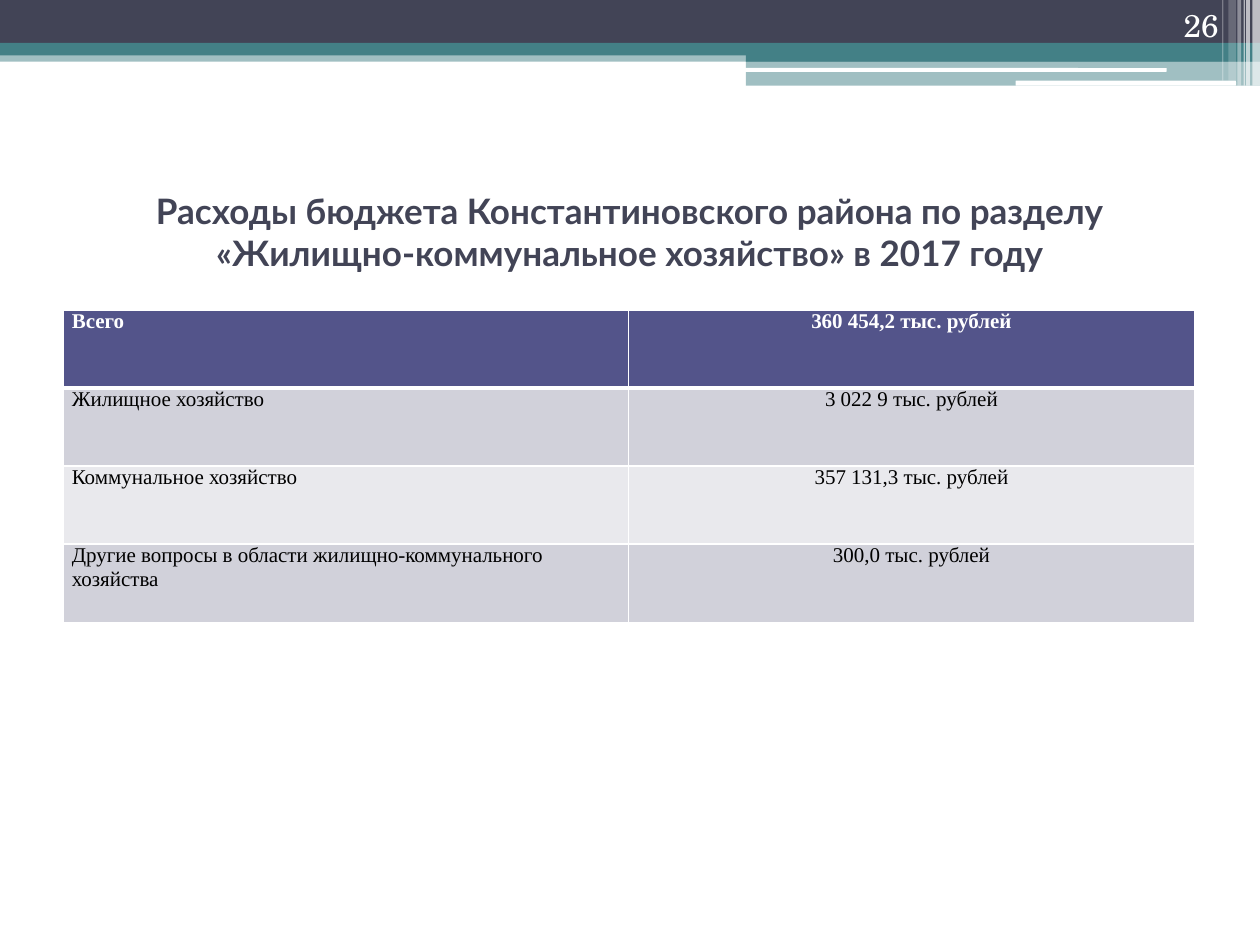
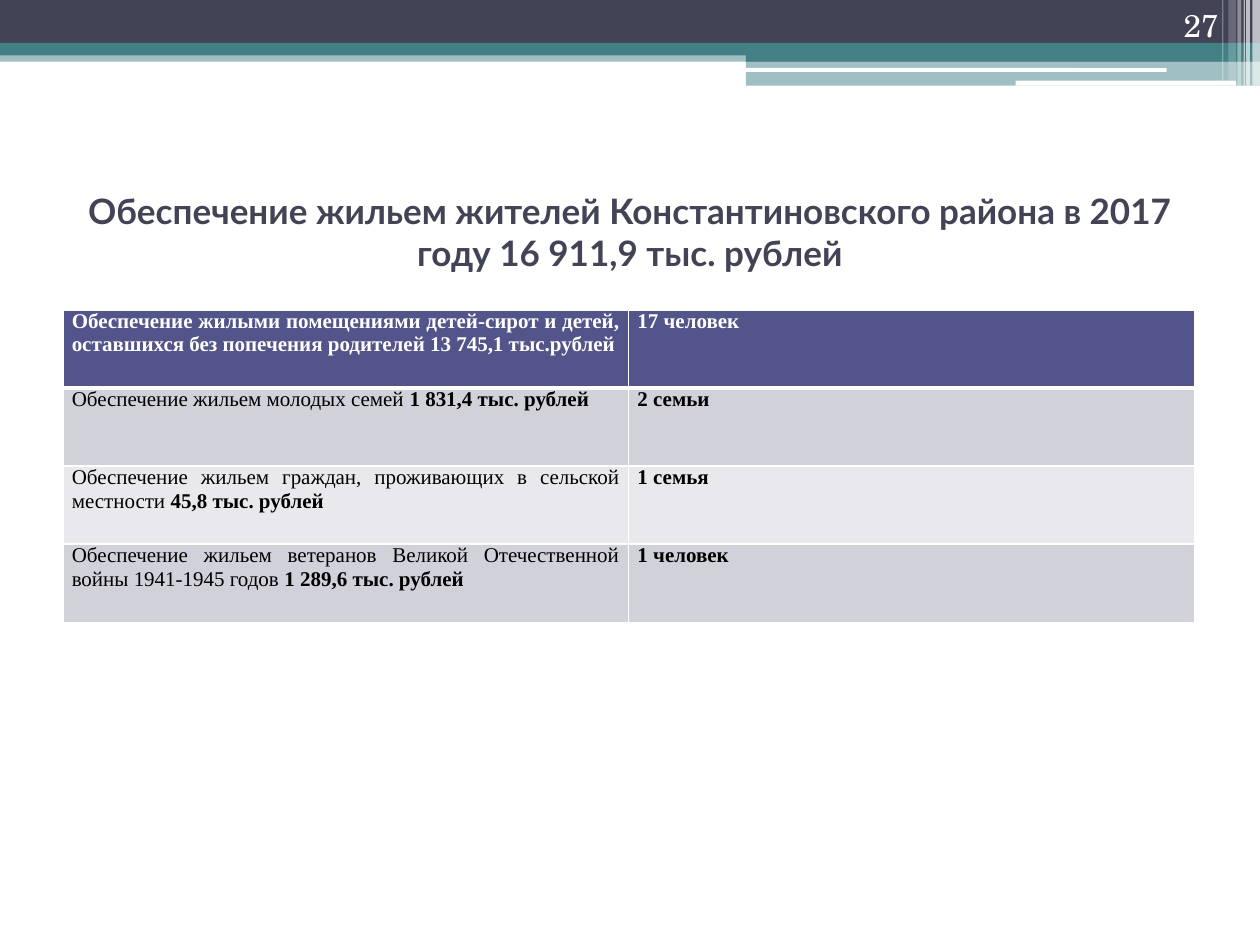
from dataclasses import dataclass

from lxml import etree
from pptx import Presentation
from pptx import util as u
from pptx.dml.color import RGBColor
from pptx.enum import shapes, text
from pptx.oxml import ns


@dataclass(frozen=True)
class Theme:
    dark: str = "424456"
    teal: str = "438086"
    white: str = "FFFFFF"
    black: str = "000000"
    header: str = "53548A"
    band_odd: str = "D1D1DA"
    band_even: str = "E9E9ED"
    title_font: str = "Lato"
    table_font: str = "Times New Roman"
    number_font: str = "TeX Gyre Schola"
    title_size: int = 20
    table_size: int = 12
    number_size: int = 18


theme = Theme()
al = text.PP_ALIGN
anchor = text.MSO_ANCHOR
rect = shapes.MSO_SHAPE.RECTANGLE
rounded = shapes.MSO_SHAPE.ROUNDED_RECTANGLE

title_format = {"name": theme.title_font, "size": u.Pt(theme.title_size), "bold": True}
table_format = {"name": theme.table_font, "size": u.Pt(theme.table_size)}
number_format = {"name": theme.number_font, "size": u.Pt(theme.number_size)}

bands = [
    (rect, 0, 0.4, 10, 0.09, theme.teal, 50),
    (rect, 0, 0, 10, 0.34, theme.dark, 100),
    (rect, 0, 0.34, 10, 0.1, theme.teal, 100),
    (rect, 5.92, 0.39, 4.08, 0.1, theme.teal, 100),
    (rect, 5.92, 0.48, 4.08, 0.2, theme.teal, 50),
    (rounded, 5.91, 0.54, 3.35, 0.03, theme.white, 100),
    (rounded, 8.06, 0.64, 1.75, 0.04, theme.white, 100),
]
stripes = [
    (9.94, 0.06, 0.68, 65),
    (9.89, 0.03, 0.68, 65),
    (9.87, 0.01, 0.68, 60),
    (9.82, 0.03, 0.68, 40),
    (9.75, 0.06, 0.64, 20),
    (9.7, 0.01, 0.64, 30),
]
bands += [(rect, x, 0, w, h, theme.white, alpha) for x, w, h, alpha in stripes]

pages = [
    {
        "number": "26",
        "title": "Расходы бюджета Константиновского района по разделу "
                 "«Жилищно-коммунальное хозяйство» в 2017 году",
        "aligns": (al.LEFT, al.CENTER),
        "rows": [
            ("|Всего", "|360 454,2 тыс. рублей"),
            ("Жилищное хозяйство", "3 022 9 тыс. рублей"),
            ("Коммунальное хозяйство", "357 131,3 тыс. рублей"),
            ("Другие вопросы в области жилищно-коммунального хозяйства", "300,0 тыс. рублей"),
        ],
    },
    {
        "number": "27",
        "title": "Обеспечение жильем жителей Константиновского района в 2017 году "
                 "16 911,9 тыс. рублей",
        "aligns": (al.JUSTIFY, al.JUSTIFY),
        "rows": [
            ("|Обеспечение жилыми помещениями детей-сирот и детей, оставшихся без "
             "попечения родителей 13 745,1 тыс.рублей", "|17 человек"),
            ("Обеспечение жильем молодых семей |1 831,4 тыс. рублей", "|2 семьи"),
            ("Обеспечение жильем граждан, проживающих в сельской местности "
             "|45,8 тыс. рублей", "|1 семья"),
            ("Обеспечение жильем ветеранов Великой Отечественной войны 1941-1945 годов "
             "|1 289,6 тыс. рублей", "|1 человек"),
        ],
    },
]


def add_run(p, words, color, formats):
    r = p.add_run()
    r.text = words
    r.font.color.rgb = RGBColor.from_string(color)
    for key, value in formats.items():
        setattr(r.font, key, value)


def add_text(s, box, words, color, formats, align, vertical):
    tf = s.shapes.add_textbox(*map(u.Inches, box)).text_frame
    tf.word_wrap = True
    tf.vertical_anchor = vertical
    p = tf.paragraphs[0]
    p.alignment = align
    add_run(p, words, color, formats)


prs = Presentation()
prs.slide_width, prs.slide_height = u.Inches(10), u.Inches(7.5)

for page in pages:
    s = prs.slides.add_slide(prs.slide_layouts[6])

    for kind, x, y, w, h, color, alpha in bands:
        sp = s.shapes.add_shape(kind, *map(u.Inches, (x, y, w, h)))
        sp.shadow.inherit = False
        sp.line.fill.background()
        sp.fill.solid()
        sp.fill.fore_color.rgb = RGBColor.from_string(color)
        if alpha < 100:
            clr = sp.fill._xPr.find(".//" + ns.qn("a:srgbClr"))
            etree.SubElement(clr, ns.qn("a:alpha"), val=str(alpha * 1000))

    add_text(s, (0.5, 1.25, 9, 1.17), page["title"], theme.dark, title_format,
             al.CENTER, anchor.MIDDLE)

    rows = page["rows"]
    table = s.shapes.add_table(len(rows), 2, *map(u.Inches, (0.5, 2.46, 8.98, 2.48))).table
    table.first_row = table.horz_banding = False
    for i, row in enumerate(rows):
        fill = theme.header if i == 0 else theme.band_odd if i % 2 else theme.band_even
        color = theme.white if i == 0 else theme.black
        borders = {"L": 1, "R": 1, "T": 3 if i == 1 else 1, "B": 3 if i == 0 else 1}
        for j, words in enumerate(row):
            cell = table.cell(i, j)
            cell.margin_left = cell.margin_right = u.Inches(0.07)
            cell.margin_top = cell.margin_bottom = 0
            tc_pr = cell._tc.get_or_add_tcPr()
            for side, width in borders.items():
                ln = etree.SubElement(tc_pr, ns.qn("a:ln" + side), w=str(u.Pt(width)))
                solid = etree.SubElement(ln, ns.qn("a:solidFill"))
                etree.SubElement(solid, ns.qn("a:srgbClr"), val=theme.white)
            cell.fill.solid()
            cell.fill.fore_color.rgb = RGBColor.from_string(fill)
            p = cell.text_frame.paragraphs[0]
            p.alignment = page["aligns"][j]
            plain, _, strong = words.partition("|")
            for part, bold in ((plain, False), (strong, True)):
                if part:
                    add_run(p, part, color, {**table_format, "bold": bold})

    add_text(s, (8.94, 0, 0.83, 0.4), page["number"], theme.white, number_format,
             al.RIGHT, anchor.BOTTOM)

prs.save("out.pptx")
